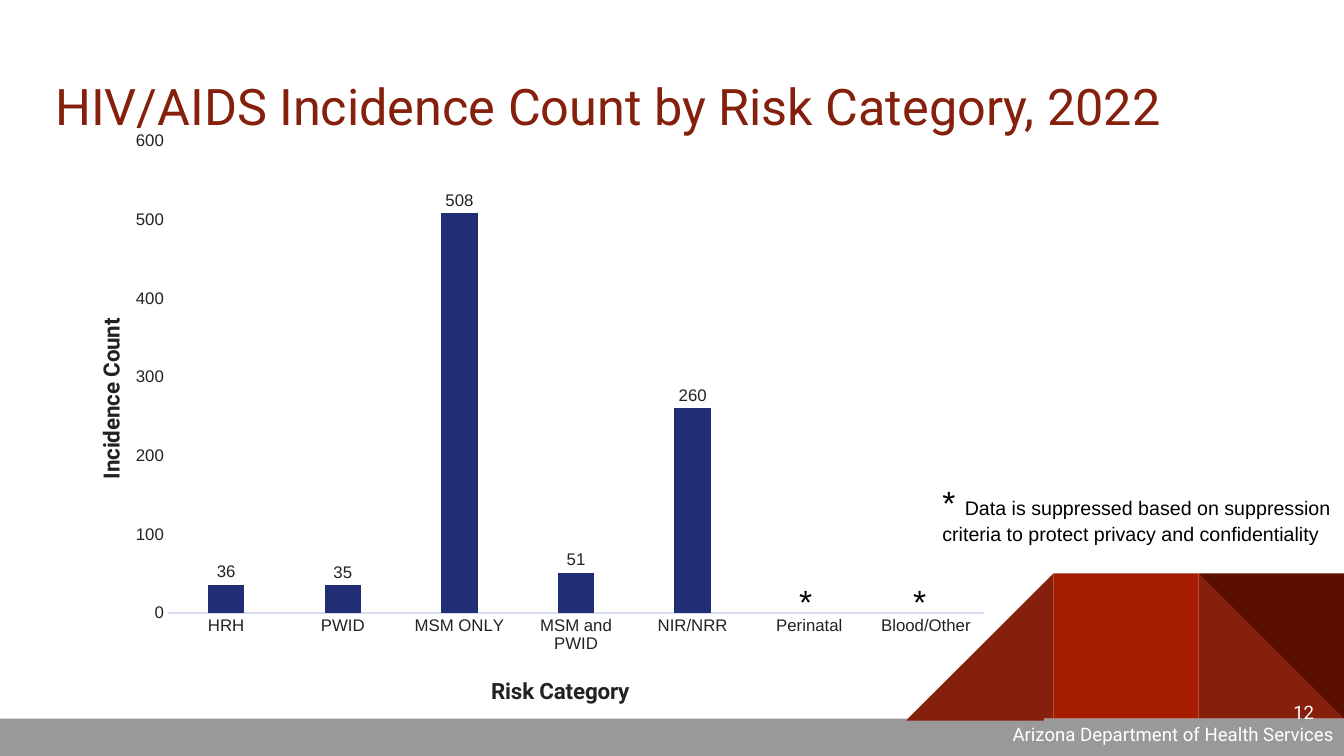
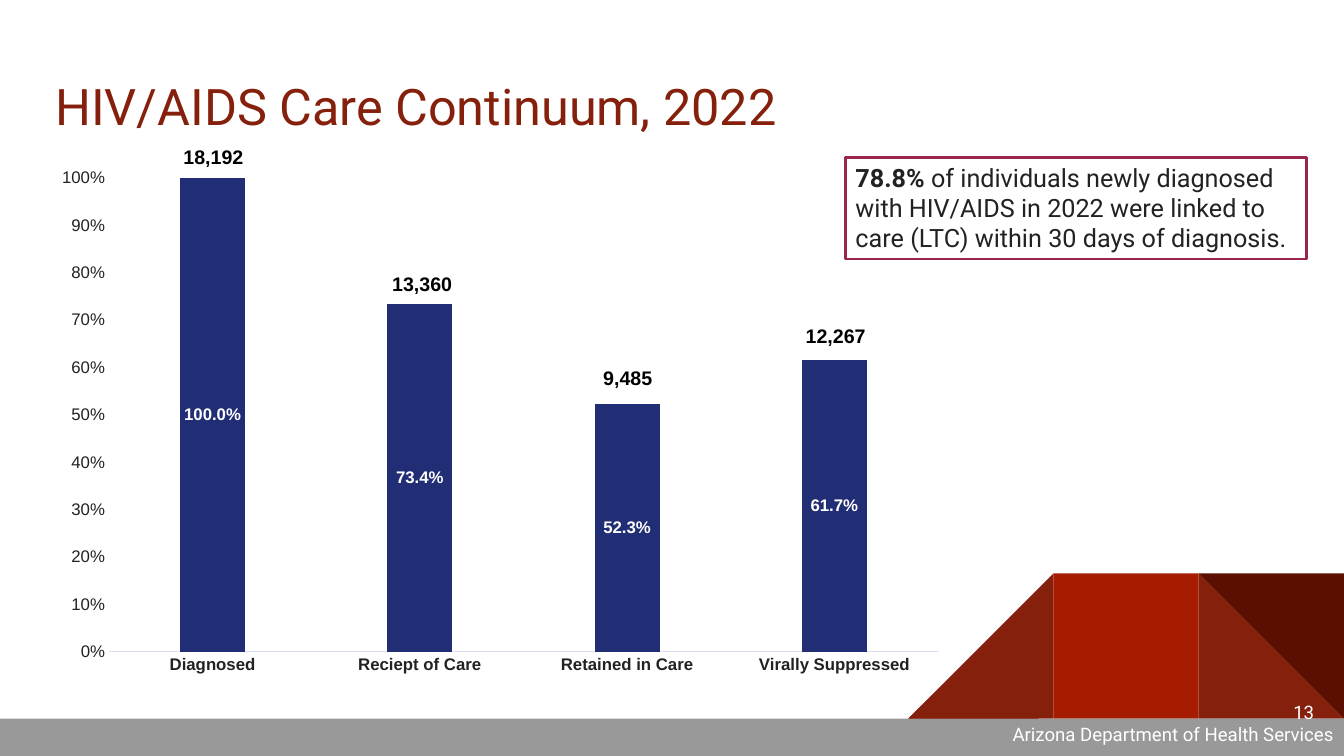
from dataclasses import dataclass
from typing import Optional

from lxml import etree
from pptx import Presentation
from pptx.chart.chart import Chart
from pptx.chart.data import CategoryChartData
from pptx.dml.color import RGBColor
from pptx.enum.chart import XL_CHART_TYPE, XL_LABEL_POSITION, XL_TICK_MARK
from pptx.enum.shapes import MSO_SHAPE
from pptx.enum.text import MSO_ANCHOR, PP_ALIGN
from pptx.oxml.ns import qn
from pptx.shapes.autoshape import Shape
from pptx.slide import Slide
from pptx.util import Cm, Pt

# Colours and fonts
RUST = RGBColor(0x85, 0x20, 0x0C)
RED = RGBColor(0xA6, 0x1C, 0x00)
MAROON = RGBColor(0x5B, 0x0F, 0x00)
GREY = RGBColor(0x99, 0x99, 0x99)
NAVY = RGBColor(0x21, 0x2D, 0x74)
AXIS_LINE = RGBColor(0xD9, 0xDD, 0xF4)
PLUM = RGBColor(0x9C, 0x25, 0x4D)
INK = RGBColor(0x22, 0x22, 0x22)
BLACK = RGBColor(0, 0, 0)
WHITE = RGBColor(0xFF, 0xFF, 0xFF)
SANS, DISPLAY = "Arial", "Roboto"

# Shared geometry, in centimetres
SLIDE_W, SLIDE_H = 33.87, 19.05
BAND_TOP = 18.11
FACET = 3.66


@dataclass(frozen=True)
class Box:
    left: float
    top: float
    width: float
    height: float

    def lengths(self) -> tuple[Cm, Cm, Cm, Cm]:
        return Cm(self.left), Cm(self.top), Cm(self.width), Cm(self.height)


@dataclass(frozen=True)
class Run:
    text: str
    size: float
    color: RGBColor = BLACK
    font: str = SANS
    bold: bool = False


@dataclass(frozen=True)
class Facet:
    column: int  # counted from the right edge
    outline: MSO_SHAPE
    color: RGBColor
    rotation: int = 0
    flipped: bool = False


@dataclass(frozen=True)
class ColumnChart:
    box: Box
    plot: tuple[float, ...]  # x, y, width, height as shares of the chart
    categories: tuple[str, ...]
    values: tuple[Optional[float], ...]
    axis_max: float
    axis_step: float
    axis_format: str
    label_format: str
    label_position: XL_LABEL_POSITION
    label_color: RGBColor
    bold: bool = False


FACETS = (
    Facet(1, MSO_SHAPE.RIGHT_TRIANGLE, RUST),
    Facet(3, MSO_SHAPE.RIGHT_TRIANGLE, RUST, flipped=True),
    Facet(2, MSO_SHAPE.RECTANGLE, RED),
    Facet(1, MSO_SHAPE.RIGHT_TRIANGLE, MAROON, rotation=180),
)


def style_font(font, size: float, color: RGBColor, name: str, bold: bool) -> None:
    font.size, font.name, font.bold = Pt(size), name, bold
    font.color.rgb = color


def write(shape: Shape, runs: list[Run], align: PP_ALIGN = PP_ALIGN.LEFT,
          anchor: MSO_ANCHOR = MSO_ANCHOR.TOP, inset: float = 0.13) -> None:
    frame = shape.text_frame
    frame.word_wrap = True
    frame.vertical_anchor = anchor
    frame.margin_left = frame.margin_right = Cm(0.25)
    frame.margin_top = frame.margin_bottom = Cm(inset)
    paragraph = frame.paragraphs[0]
    paragraph.alignment = align
    for item in runs:
        run = paragraph.add_run()
        run.text = item.text
        style_font(run.font, item.size, item.color, item.font, item.bold)


def add_text(slide: Slide, box: Box, runs: list[Run], **layout) -> None:
    write(slide.shapes.add_textbox(*box.lengths()), runs, **layout)


def add_block(slide: Slide, outline: MSO_SHAPE, box: Box, color: RGBColor) -> Shape:
    block = slide.shapes.add_shape(outline, *box.lengths())
    block.shadow.inherit = False
    block.fill.solid()
    block.fill.fore_color.rgb = color
    block.line.fill.background()
    return block


def add_slope(slide: Slide, box: Box) -> None:
    add_block(slide, MSO_SHAPE.ISOSCELES_TRIANGLE, box, RUST).adjustments[0] = 1


def start_slide(deck: Presentation, title: str) -> Slide:
    slide = deck.slides.add_slide(deck.slide_layouts[6])
    # Faceted corner
    for facet in FACETS:
        box = Box(SLIDE_W - facet.column * FACET, BAND_TOP - FACET, FACET, FACET)
        block = add_block(slide, facet.outline, box, facet.color)
        block.rotation = facet.rotation
        if facet.flipped:
            block._element.spPr.find(qn("a:xfrm")).set("flipH", "1")
    # Footer band
    add_block(slide, MSO_SHAPE.RECTANGLE,
              Box(0, BAND_TOP, SLIDE_W, SLIDE_H - BAND_TOP), GREY)
    add_text(slide, Box(24, 17.96, 9.87, 1.09),
             [Run("Arizona Department of Health Services", 13.3, WHITE, DISPLAY)],
             align=PP_ALIGN.RIGHT, inset=0.25)
    # Title
    add_text(slide, Box(1.14, 1.52, 31.55, 2.26), [Run(title, 36, RUST, DISPLAY)],
             anchor=MSO_ANCHOR.MIDDLE, inset=0.25)
    return slide


def add_page_number(slide: Slide, number: int) -> None:
    add_text(slide, Box(31.34, 17.22, 2.03, 1.45),
             [Run(str(number), 13.3, WHITE, DISPLAY)],
             align=PP_ALIGN.RIGHT, anchor=MSO_ANCHOR.MIDDLE, inset=0.25)


def place(part: etree._Element, shares: tuple[float, ...], inner: bool = False) -> None:
    """Give a plot area or an axis title a fixed place in its chart."""
    for old in part.findall(qn("c:layout")):
        part.remove(old)
    layout = etree.Element(qn("c:layout"))
    part.insert(1 if part.find(qn("c:tx")) is not None else 0, layout)
    manual = etree.SubElement(layout, qn("c:manualLayout"))
    settings = [("layoutTarget", "inner")] if inner else []
    settings += [("xMode", "edge"), ("yMode", "edge")]
    settings += [(key, str(share)) for key, share in zip("xywh", shares)]
    for key, value in settings:
        etree.SubElement(manual, qn(f"c:{key}")).set("val", value)


def title_axis(axis, text: str, shares: tuple[float, ...], rotation: int = 0) -> None:
    frame = axis.axis_title.text_frame
    run = frame.paragraphs[0].add_run()
    run.text = text
    style_font(run.font, 16, INK, DISPLAY, True)
    frame._txBody.bodyPr.set("rot", str(rotation * 60000))
    frame._txBody.bodyPr.set("vert", "horz")
    place(axis.axis_title._element, shares)


def add_columns(slide: Slide, columns: ColumnChart) -> Chart:
    data = CategoryChartData()
    data.categories = columns.categories
    data.add_series("Series 1", columns.values)
    chart = slide.shapes.add_chart(XL_CHART_TYPE.COLUMN_CLUSTERED,
                                   *columns.box.lengths(), data).chart
    chart.has_legend = chart.has_title = False
    style_font(chart.font, 12, INK, SANS, False)
    # Columns and their labels
    plot = chart.plots[0]
    plot.gap_width, plot.overlap, plot.vary_by_categories = 219, -27, False
    series = plot.series[0]
    series.format.fill.solid()
    series.format.fill.fore_color.rgb = NAVY
    labels = series.data_labels
    labels.show_value = True
    labels.position = columns.label_position
    labels.number_format = columns.label_format
    labels.number_format_is_linked = False
    style_font(labels.font, 12, columns.label_color, SANS, columns.bold)
    # Axes
    for axis in (chart.category_axis, chart.value_axis):
        axis.has_major_gridlines = False
        axis.major_tick_mark = axis.minor_tick_mark = XL_TICK_MARK.NONE
    category, value = chart.category_axis, chart.value_axis
    style_font(category.tick_labels.font, 12, INK, SANS, columns.bold)
    style_font(value.tick_labels.font, 12, INK, SANS, False)
    category.format.line.color.rgb = AXIS_LINE
    category.format.line.width = Pt(0.75)
    value.format.line.fill.background()
    value.minimum_scale, value.maximum_scale = 0, columns.axis_max
    value.major_unit = columns.axis_step
    value.tick_labels.number_format = columns.axis_format
    value.tick_labels.number_format_is_linked = False
    place(chart._chartSpace.find(".//" + qn("c:plotArea")), columns.plot, inner=True)
    return chart


def build_incidence(deck: Presentation) -> None:
    slide = start_slide(deck, "HIV/AIDS Incidence Count by Risk Category, 2022")
    add_slope(slide, Box(22.83, 14.71, 3.48, 3.45))
    chart = add_columns(slide, ColumnChart(
        Box(1.63, 3.1, 23.65, 15.06), (0.11, 0.03, 0.87, 0.79),
        ("HRH", "PWID", "MSM ONLY", "MSM and PWID", "NIR/NRR", "Perinatal",
         "Blood/Other"),
        (36, 35, 508, 51, 260, None, None),
        600, 100, "General", "General", XL_LABEL_POSITION.OUTSIDE_END, INK))
    title_axis(chart.category_axis, "Risk Category", (0.45, 0.92))
    title_axis(chart.value_axis, "Incidence Count", (0.03, 0.32), rotation=-90)
    # Suppression note and marks
    add_text(slide, Box(23.5, 12.01, 10.37, 1.88), [
        Run("* ", 24),
        Run("Data is suppressed based on suppression criteria to protect "
            "privacy and confidentiality", 14)])
    for left in (19.89, 22.76):
        add_text(slide, Box(left, 14.5, 1.04, 1.27), [Run("*", 24)])
    add_page_number(slide, 12)


def build_continuum(deck: Presentation) -> None:
    slide = start_slide(deck, "HIV/AIDS Care Continuum, 2022")
    add_columns(slide, ColumnChart(
        Box(1.14, 3.96, 22.96, 13.26), (0.07, 0.04, 0.91, 0.9),
        ("Diagnosed", "Reciept of Care", "Retained in Care", "Virally Suppressed"),
        (1, 0.734, 0.523, 0.617),
        1, 0.1, "0%", "0.0%", XL_LABEL_POSITION.CENTER, WHITE, bold=True))
    # Linkage to care callout
    callout = add_block(slide, MSO_SHAPE.RECTANGLE, Box(21.31, 3.96, 11.61, 2.57), WHITE)
    callout.line.color.rgb = PLUM
    callout.line.width = Pt(2)
    write(callout, [
        Run("78.8% ", 18, INK, DISPLAY, True),
        Run("of individuals newly diagnosed with HIV/AIDS in 2022 were linked to "
            "care (LTC) within 30 days of diagnosis.", 18, INK, DISPLAY)])
    # Head counts above the columns
    for count, left, top in (("18,192", 4.06, 3.53), ("13,360", 9.32, 6.73),
                             ("9,485", 14.5, 9.09), ("12,267", 19.74, 8.03)):
        add_text(slide, Box(left, top, 2.64, 0.86), [Run(count, 14, bold=True)],
                 align=PP_ALIGN.CENTER)
    add_page_number(slide, 13)
    add_slope(slide, Box(22.89, 14.91, 3.28, 3.2))


def main() -> None:
    deck = Presentation()
    deck.slide_width, deck.slide_height = Cm(SLIDE_W), Cm(SLIDE_H)
    build_incidence(deck)
    build_continuum(deck)
    deck.save("out.pptx")


if __name__ == "__main__":
    main()
